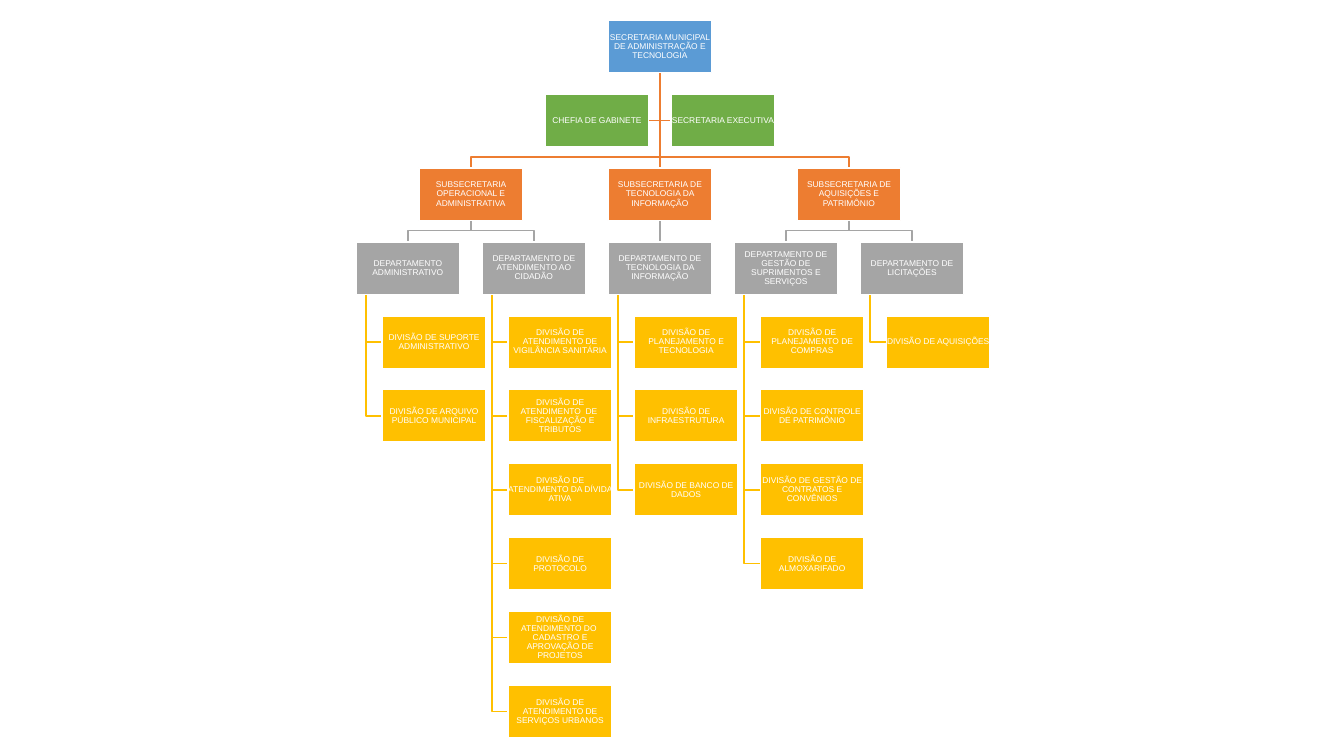
from dataclasses import dataclass, field

from lxml import etree
from pptx import Presentation
from pptx import util as u
from pptx.dml import color
from pptx.enum import shapes, text
from pptx.oxml import ns

WIDE, HIGH = 1.03, 0.52
LEFT, TOP = 3.53, 0.2
STEP, PITCH = 1.25, 6.6 / 9
SHIFT, STEM, DROP = 0.26, 0.1, 0.11
WHITE, BLUE, GREEN = "FFFFFF", "5B9BD5", "70AD47"
ORANGE, GREY, GOLD = "ED7D31", "A5A5A5", "FFC000"
Point = tuple[float, float]


@dataclass
class Unit:
    name: str
    col: float
    row: int
    fill: str
    shift: float = 0
    kids: list["Unit"] = field(default_factory=list)

    @property
    def x(self) -> float:
        return LEFT + STEP * self.col + self.shift

    @property
    def y(self) -> float:
        return TOP + PITCH * self.row

    @property
    def mid(self) -> float:
        return self.x + WIDE / 2


def dept(name: str, col: int, *parts: str) -> Unit:
    kids = [Unit(part, col, row, GOLD, SHIFT) for row, part in enumerate(parts, 4)]
    return Unit(name, col, 3, GREY, kids=kids)


def branch(name: str, *kids: Unit) -> Unit:
    col = sum(kid.col for kid in kids) / len(kids)
    return Unit(name, col, 2, ORANGE, kids=list(kids))


HEAD = Unit("SECRETARIA MUNICIPAL DE ADMINISTRAÇÃO E TECNOLOGIA", 2, 0, BLUE, kids=[
    branch(
        "SUBSECRETARIA OPERACIONAL E ADMINISTRATIVA",
        dept("DEPARTAMENTO ADMINISTRATIVO", 0,
             "DIVISÃO DE SUPORTE ADMINISTRATIVO",
             "DIVISÃO DE ARQUIVO PÚBLICO MUNICIPAL"),
        dept("DEPARTAMENTO DE ATENDIMENTO AO CIDADÃO", 1,
             "DIVISÃO DE ATENDIMENTO DE VIGILÂNCIA SANITÁRIA",
             "DIVISÃO DE ATENDIMENTO  DE  FISCALIZAÇÃO E TRIBUTOS",
             "DIVISÃO DE ATENDIMENTO DA DÍVIDA ATIVA",
             "DIVISÃO DE PROTOCOLO",
             "DIVISÃO DE ATENDIMENTO DO  CADASTRO E APROVAÇÃO DE PROJETOS",
             "DIVISÃO DE ATENDIMENTO DE SERVIÇOS URBANOS")),
    branch(
        "SUBSECRETARIA DE TECNOLOGIA DA INFORMAÇÃO",
        dept("DEPARTAMENTO DE TECNOLOGIA DA INFORMAÇÃO", 2,
             "DIVISÃO DE PLANEJAMENTO E TECNOLOGIA",
             "DIVISÃO DE INFRAESTRUTURA",
             "DIVISÃO DE BANCO DE DADOS")),
    branch(
        "SUBSECRETARIA DE AQUISIÇÕES E PATRIMÔNIO",
        dept("DEPARTAMENTO DE GESTÃO DE SUPRIMENTOS E SERVIÇOS", 3,
             "DIVISÃO DE PLANEJAMENTO DE COMPRAS",
             "DIVISÃO DE CONTROLE DE PATRIMÔNIO",
             "DIVISÃO DE GESTÃO DE CONTRATOS E CONVÊNIOS",
             "DIVISÃO DE ALMOXARIFADO"),
        dept("DEPARTAMENTO DE LICITAÇÕES", 4,
             "DIVISÃO DE AQUISIÇÕES")),
    Unit("CHEFIA DE GABINETE", 1.5, 1, GREEN),
    Unit("SECRETARIA EXECUTIVA", 2.5, 1, GREEN),
])


def rgb(code: str) -> color.RGBColor:
    return color.RGBColor.from_string(code)


def put(thing: object, **values: object) -> None:
    for name, value in values.items():
        setattr(thing, name, value)


def route(boss: Unit, kid: Unit) -> list[Point]:
    base = boss.y + HIGH
    half = kid.y + HIGH / 2
    if kid.fill == GOLD:
        stem = boss.x + STEM
        return [(stem, base), (stem, half), (kid.x, half)]
    if kid.fill == GREEN:
        edge = kid.x if kid.x > boss.x else kid.x + WIDE
        return [(boss.mid, base), (boss.mid, half), (edge, half)]
    if kid.col == boss.col:
        return [(boss.mid, base), (kid.mid, kid.y)]
    bar = kid.y - DROP
    return [(boss.mid, base), (boss.mid, bar), (kid.mid, bar), (kid.mid, kid.y)]


def link(slide, boss: Unit, kid: Unit) -> None:
    dots = [(u.Inches(x), u.Inches(y)) for x, y in route(boss, kid)]
    if len(dots) == 2:
        line = slide.shapes.add_connector(
            shapes.MSO_CONNECTOR.STRAIGHT, *dots[0], *dots[1])
        etree.SubElement(line._element.spPr, ns.qn("a:effectLst"))
    else:
        pen = slide.shapes.build_freeform(*dots[0])
        pen.add_line_segments(dots[1:], close=False)
        line = pen.convert_to_shape()
        line.shadow.inherit = False
        line.fill.background()
    line.line.color.rgb = rgb(ORANGE if kid.fill == GREEN else kid.fill)
    line.line.width = u.Pt(1)


def box(slide, unit: Unit) -> None:
    card = slide.shapes.add_shape(
        shapes.MSO_SHAPE.RECTANGLE,
        *map(u.Inches, (unit.x, unit.y, WIDE, HIGH)))
    card.shadow.inherit = False
    card.fill.solid()
    card.fill.fore_color.rgb = rgb(unit.fill)
    card.line.color.rgb = rgb(WHITE)
    card.line.width = u.Pt(1)
    frame = card.text_frame
    put(frame, word_wrap=True, vertical_anchor=text.MSO_ANCHOR.MIDDLE,
        margin_left=0, margin_right=0, margin_top=0, margin_bottom=0)
    para = frame.paragraphs[0]
    put(para, alignment=text.PP_ALIGN.CENTER, line_spacing=0.9)
    run = para.add_run()
    run.text = unit.name
    put(run.font, name="Arial", size=u.Pt(6))
    run.font.color.rgb = rgb(WHITE)


def links(slide, unit: Unit) -> None:
    for kid in reversed(unit.kids):
        link(slide, unit, kid)
        links(slide, kid)


def cards(slide, unit: Unit) -> None:
    box(slide, unit)
    for kid in unit.kids:
        cards(slide, kid)


def main() -> None:
    deck = Presentation()
    put(deck, slide_width=u.Inches(13.33), slide_height=u.Inches(7.5))
    slide = deck.slides.add_slide(deck.slide_layouts[6])
    links(slide, HEAD)
    cards(slide, HEAD)
    deck.save("out.pptx")


if __name__ == "__main__":
    main()
